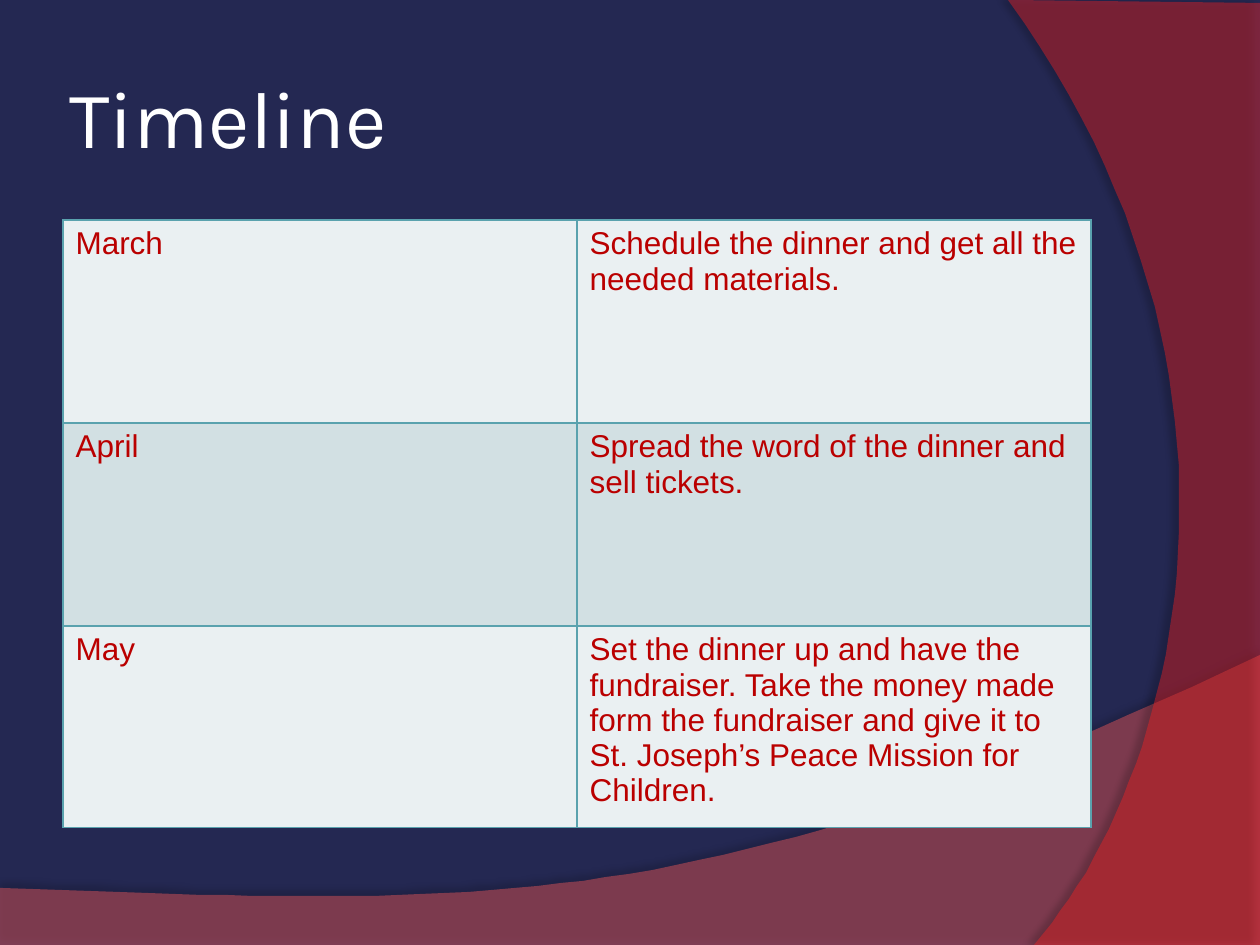
from dataclasses import dataclass

import pptx
import pptx.dml.color
import pptx.enum.text
import pptx.oxml
import pptx.oxml.ns
import pptx.util

PX = 914400 / 126
NS = pptx.oxml.ns.nsdecls("a")
NAVY, WHITE, TEAL, RED = "242852", "FFFFFF", "5AA2AE", "BA0000"
BANDS = ("EAF0F2", "D2E0E3")
CURVE_STEPS = 48

Point = tuple[int, int]


@dataclass
class Swoosh:
    """A tinted area with straight edges and one closing Bezier curve."""
    corners: list[Point]
    curve: tuple[Point, Point, Point]
    color: str
    opacity: int
    shadow_opacity: int
    shadow_distance: float
    shadow_angle: int


@dataclass
class Step:
    month: str
    task: str


SWOOSHES = [
    Swoosh([(0, 888), (0, 946), (1260, 946), (1260, 655)],
           ((704, 919), (493, 906), (0, 888)), "F05959", 45, 35, 3.5, 270),
    Swoosh([(1260, 3), (1260, 945), (1034, 945)],
           ((1178, 780), (1283, 378), (1008, 0)), "FF2121", 40, 45, 4, 180),
]
STEPS = [
    Step("March", "Schedule the dinner and get all the needed materials."),
    Step("April", "Spread the word of the dinner and sell tickets."),
    Step("May", "Set the dinner up and have the fundraiser. Take the money made "
                "form the fundraiser and give it to St. Joseph’s Peace Mission "
                "for Children."),
]
ROW_HEIGHTS = (203, 203, 117)
COLUMN_WIDTH = 514


def px(length: int) -> int:
    return round(length * PX)


def rgb(color: str) -> pptx.dml.color.RGBColor:
    return pptx.dml.color.RGBColor.from_string(color)


def paint(fill, color: str) -> None:
    fill.solid()
    fill.fore_color.rgb = rgb(color)


def style(paragraph, font_name: str, size: int, color: str) -> None:
    paragraph.font.name = font_name
    paragraph.font.size = pptx.util.Pt(size)
    paragraph.font.color.rgb = rgb(color)


def bezier(points: list[Point]) -> list[tuple[float, float]]:
    """Sample a cubic curve, leaving out its starting point."""
    samples = []
    for step in range(1, CURVE_STEPS + 1):
        t = step / CURVE_STEPS
        weights = ((1 - t) ** 3, 3 * t * (1 - t) ** 2, 3 * t * t * (1 - t), t ** 3)
        samples.append(tuple(sum(w * point[axis] for w, point in zip(weights, points))
                             for axis in (0, 1)))
    return samples


def draw_swoosh(slide, swoosh: Swoosh) -> None:
    start, *edges = swoosh.corners
    builder = slide.shapes.build_freeform(*start, scale=PX)
    builder.add_line_segments(edges + bezier([edges[-1], *swoosh.curve]), close=True)
    area = builder.convert_to_shape()
    paint(area.fill, swoosh.color)
    area.line.fill.background()
    properties = area.fill._xPr
    tint = properties.find(".//" + pptx.oxml.ns.qn("a:srgbClr"))
    tint.append(pptx.oxml.parse_xml(f'<a:alpha {NS} val="{swoosh.opacity * 1000}"/>'))
    properties.append(pptx.oxml.parse_xml(
        f'<a:effectLst {NS}><a:outerShdw blurRad="{pptx.util.Pt(4)}" '
        f'dist="{pptx.util.Pt(swoosh.shadow_distance)}" '
        f'dir="{swoosh.shadow_angle * 60000}" algn="ctr" rotWithShape="0">'
        f'<a:srgbClr val="000000"><a:alpha val="{swoosh.shadow_opacity * 1000}"/>'
        '</a:srgbClr></a:outerShdw></a:effectLst>'))


def draw_title(slide, text: str) -> None:
    title = slide.shapes.add_textbox(px(63), px(38), px(1029), px(157))
    frame = title.text_frame
    frame.word_wrap = True
    frame.vertical_anchor = pptx.enum.text.MSO_ANCHOR.MIDDLE
    frame.margin_left = frame.margin_right = pptx.util.Inches(0.05)
    frame.text = text
    style(frame.paragraphs[0], "Karla", 46, WHITE)


def fill_cell(cell, text: str, color: str) -> None:
    cell.text = text
    style(cell.text_frame.paragraphs[0], "Arial", 18, RED)
    properties = cell._tc.get_or_add_tcPr()
    for side in "LRTB":
        properties.append(pptx.oxml.parse_xml(
            f'<a:ln{side} {NS} w="{pptx.util.Pt(1)}"><a:solidFill>'
            f'<a:srgbClr val="{TEAL}"/></a:solidFill></a:ln{side}>'))
    paint(cell.fill, color)


def draw_timeline(slide, steps: list[Step]) -> None:
    timeline = slide.shapes.add_table(len(steps), 2, px(63), px(220),
                                      px(2 * COLUMN_WIDTH), px(607)).table
    timeline.first_row = timeline.horz_banding = False
    for column in timeline.columns:
        column.width = px(COLUMN_WIDTH)
    for index, (step, height) in enumerate(zip(steps, ROW_HEIGHTS)):
        timeline.rows[index].height = px(height)
        for cell, text in zip(timeline.rows[index].cells, (step.month, step.task)):
            fill_cell(cell, text, BANDS[index % 2])


def main() -> None:
    deck = pptx.Presentation()
    deck.slide_width, deck.slide_height = px(1260), px(945)
    slide = deck.slides.add_slide(deck.slide_layouts[6])
    paint(slide.background.fill, NAVY)
    for swoosh in SWOOSHES:
        draw_swoosh(slide, swoosh)
    draw_title(slide, "Timeline")
    draw_timeline(slide, STEPS)
    deck.save("out.pptx")


if __name__ == "__main__":
    main()
